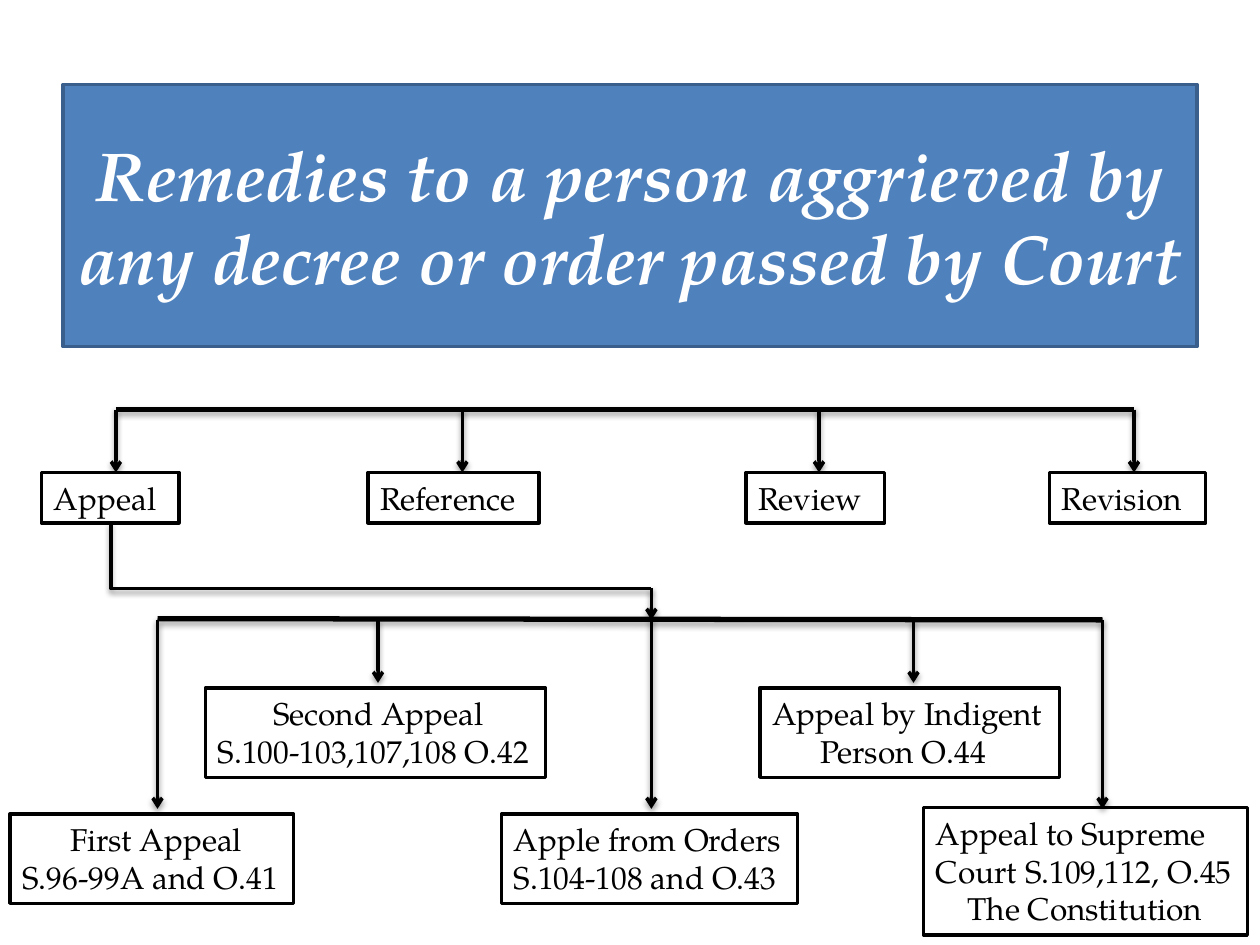
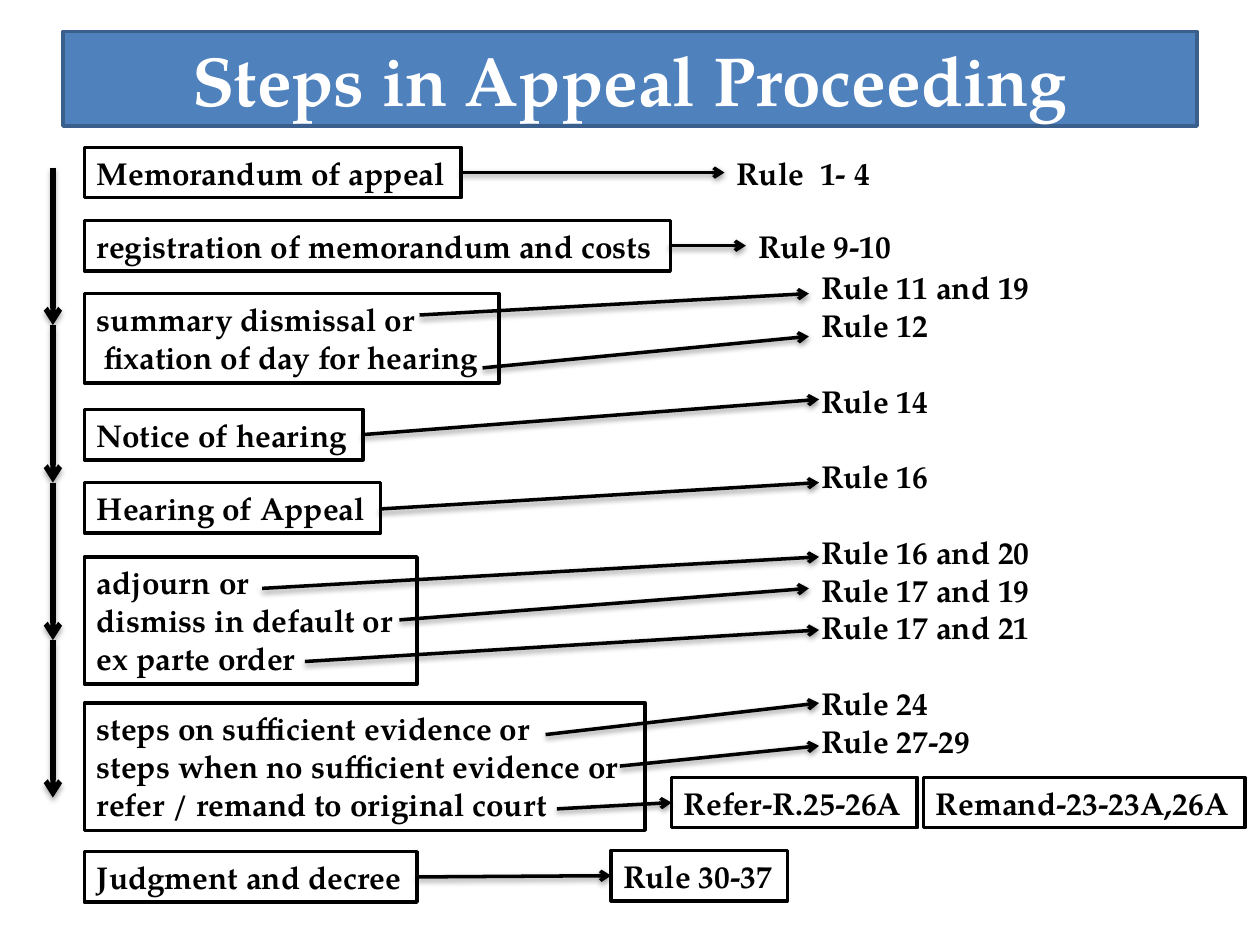
from pptx import Presentation
from pptx.dml.color import RGBColor
from pptx.enum.shapes import MSO_CONNECTOR
from pptx.enum.text import MSO_ANCHOR, MSO_AUTO_SIZE, PP_ALIGN
from pptx.oxml import parse_xml
from pptx.oxml.ns import nsdecls, qn
from pptx.util import Emu, Pt

PX = 9144  # one px is a hundredth of an inch
BLACK = RGBColor(0x00, 0x00, 0x00)
WHITE = RGBColor(0xFF, 0xFF, 0xFF)
BLUE = RGBColor(0x4F, 0x81, 0xBD)
NAVY = RGBColor(0x3A, 0x5F, 0x8C)
FONT = "TeX Gyre Pagella"
LEAD = Pt(21.6)  # height of one line of body text


def px(n):
    return Emu(round(n * PX))


class Deck:
    """Holds the style and the current slide."""

    def __init__(self):
        self.prs = Presentation()
        self.prs.slide_width, self.prs.slide_height = px(1000), px(750)
        self.slide = None
        self.bold = False

    def start(self, title, top, high, bold=False, slant=False):
        self.slide = self.prs.slides.add_slide(self.prs.slide_layouts[5])
        self.bold = bold
        band = self.slide.shapes.title
        band.left, band.top, band.width, band.height = px(50), px(top), px(900), px(high)
        self.paint(band, BLUE, NAVY)
        frame = band.text_frame
        frame.word_wrap = True
        frame.auto_size = MSO_AUTO_SIZE.NONE
        frame.vertical_anchor = MSO_ANCHOR.MIDDLE
        para = frame.paragraphs[0]
        para.alignment = PP_ALIGN.CENTER
        self.run(para, title, 39.6, WHITE, True, slant)

    def paint(self, shape, fill, edge):
        shape.fill.solid()
        shape.fill.fore_color.rgb = fill
        shape.line.color.rgb = edge
        shape.line.width = Pt(2)

    def run(self, para, text, size, color, bold, slant=False):
        run = para.add_run()
        run.text = text
        font = run.font
        font.name, font.size, font.bold, font.italic = FONT, Pt(size), bold, slant
        font.color.rgb = color

    def text(self, x, y, wide, *lines):
        """A line is its text, or a pair of text and left indent."""
        high = 10 + round(30.4 * len(lines))
        shape = self.slide.shapes.add_textbox(px(x), px(y), px(wide), px(high))
        frame = shape.text_frame
        frame.word_wrap = True
        frame.margin_right = 0
        for i, line in enumerate(lines):
            words, indent = (line, 0) if isinstance(line, str) else line
            para = frame.add_paragraph() if i else frame.paragraphs[0]
            if indent:
                para._p.get_or_add_pPr().set("marL", str(px(indent)))
            self.run(para, words, 18, BLACK, self.bold)
        return shape

    def box(self, *args):
        self.paint(self.text(*args), WHITE, BLACK)

    def line(self, x1, y1, x2, y2, width=2, head=True, kind=MSO_CONNECTOR.STRAIGHT):
        line = self.slide.shapes.add_connector(kind, px(x1), px(y1), px(x2), px(y2))
        line.line.color.rgb = BLACK
        line.line.width = Pt(width)
        props = line._element.spPr
        if head:
            props.find(qn("a:ln")).append(
                parse_xml(f'<a:tailEnd {nsdecls("a")} type="arrow"/>'))
        dist, alpha = (20000, 38000) if width == 2 else (23000, 35000)
        props.append(parse_xml(
            f'<a:effectLst {nsdecls("a")}><a:outerShdw blurRad="40000" dist="{dist}" '
            f'dir="5400000" rotWithShape="0"><a:srgbClr val="{BLACK}">'
            f'<a:alpha val="{alpha}"/></a:srgbClr></a:outerShdw></a:effectLst>'))
        return line

    def elbow(self, x1, y1, x2, y2):
        """Goes down, then right: a two-leg connector turned a quarter back."""
        mid_x, mid_y = (x1 + x2) / 2, (y1 + y2) / 2
        half_w, half_h = (y2 - y1) / 2, (x2 - x1) / 2
        line = self.line(mid_x + half_w, mid_y - half_h, mid_x - half_w, mid_y + half_h,
                         head=False, kind=MSO_CONNECTOR.ELBOW)
        props = line._element.spPr
        props.find(qn("a:xfrm")).set("rot", str(270 * 60000))
        props.find(qn("a:prstGeom")).set("prst", "bentConnector2")


def remedy(deck):
    deck.start("Remedies to a person aggrieved by any decree or order passed by Court",
               67, 208, slant=True)

    # Four remedies below one bar
    deck.line(92, 325, 900, 325, 3, False)
    for stem, x, wide, name in [(92, 33, 109, "Appeal"), (367, 292, 136, "Reference"),
                                (650, 592, 110, "Review"), (900, 833, 124, "Revision")]:
        deck.line(stem, 325, stem, 375)
        deck.box(x, 375, wide, name)

    # Link from appeal to its kinds
    deck.elbow(88, 415, 517, 467)
    deck.line(517, 467, 517, 492)
    deck.line(125, 491, 875, 492, 3, False)

    # Kinds of appeal
    kinds = [
        (125, 642, 8, 646, 225, ("First Appeal", 38), "S.96-99A and O.41"),
        (300, 542, 163, 546, 270, ("Second Appeal", 44), "S.100-103,107,108 O.42"),
        (517, 642, 398, 646, 235, "Apple from Orders", "S.104-108 and O.43"),
        (725, 542, 603, 546, 238, "Appeal by Indigent", ("Person O.44", 38)),
        (875, 642, 733, 641, 257, "Appeal to Supreme", "Court S.109,112, O.45",
         ("The Constitution", 25)),
    ]
    for stem, tip, *spec in kinds:
        deck.box(*spec)
        deck.line(stem, 492, stem, tip)


def steps(deck):
    deck.start("Steps in Appeal Proceeding", 25, 75, bold=True)

    # Steps
    for y, wide, *lines in [
        (117, 299, "Memorandum of appeal"),
        (175, 465, "registration of memorandum and costs"),
        (233, 329, "summary dismissal or", ("fixation of day for hearing", 6)),
        (325, 221, "Notice of hearing"),
        (383, 235, "Hearing of Appeal"),
        (442, 264, "adjourn or", "dismiss in default or", "ex parte order"),
        (558, 445, "steps on sufficient evidence or",
         "steps when no sufficient evidence or", "refer / remand to original court"),
        (676, 264, "Judgment and decree"),
    ]:
        deck.box(67, y, wide, *lines)

    # Rules, with a one-line gap before each new group
    deck.text(575, 117, 127, "Rule  1- 4")
    deck.text(592, 175, 127, "Rule 9-10")
    groups = [["Rule 11 and 19", "Rule 12"], ["Rule 14"], ["Rule 16"],
              ["Rule 16 and 20", "Rule 17 and 19", "Rule 17 and 21"],
              ["Rule 24", "Rule 27-29"]]
    rules = deck.text(642, 208, 188, *sum(groups, []))
    rules.height = px(404)
    paras = rules.text_frame.paragraphs
    first = 0
    for group in groups[:-1]:
        first += len(group)
        paras[first].space_before = LEAD
    deck.box(533, 617, 195, "Refer-R.25-26A")
    deck.box(733, 617, 255, "Remand-23-23A,26A")
    deck.box(485, 675, 140, "Rule 30-37")

    # Arrows from step to rule
    for ends in [
        (366, 137, 575, 137), (531, 195, 592, 195), (333, 250, 642, 233),
        (383, 292, 642, 267), (287, 345, 650, 317), (301, 404, 650, 383),
        (208, 467, 650, 442), (317, 492, 642, 467), (242, 525, 650, 500),
        (433, 583, 650, 558), (492, 608, 650, 592), (442, 642, 533, 637),
        (331, 696, 485, 695),
    ]:
        deck.line(*ends)

    # Flow down the left edge
    for y in range(133, 633, 125):
        deck.line(42, y, 42, y + 125, 3)


def main():
    deck = Deck()
    remedy(deck)
    steps(deck)
    deck.prs.save("out.pptx")


if __name__ == "__main__":
    main()
